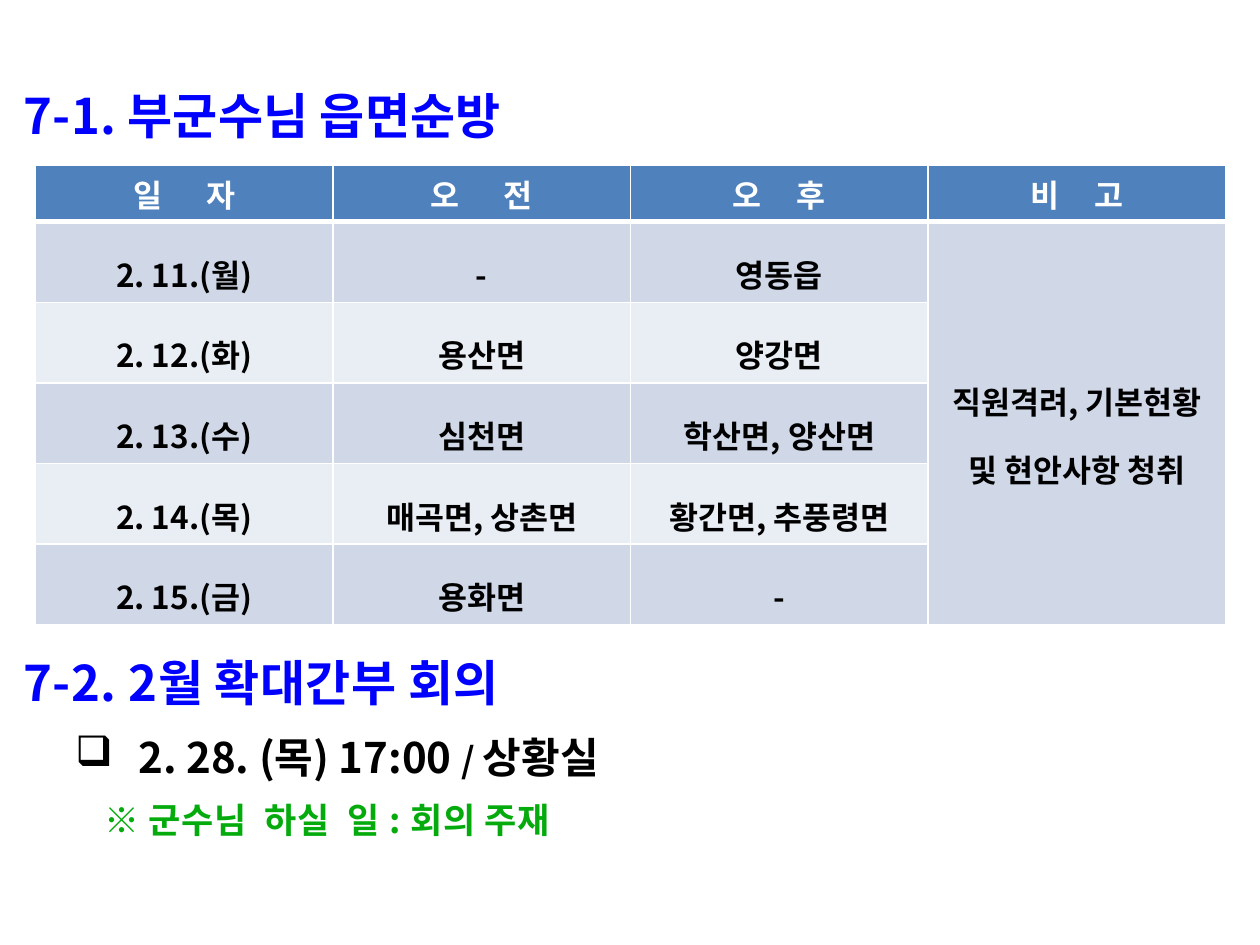
from pptx import Presentation
from pptx import util as u
from pptx.dml import color
from pptx.enum import text as t
from pptx.oxml import xmlchemy

FONT = "Noto Sans CJK KR"
BLUE, GREEN, BLACK, WHITE = "0000FF", "05AB0D", "000000", "FFFFFF"
HEAD, DARK, PALE = "4F81BD", "D0D8E8", "E9EDF4"
WIDE, HIGH = 10, 7.5
HEADS = [("일", "자", 10.5), ("오", "전", 10.5), ("오", "후", 8), ("비", "고", 8)]
DAYS = [
    ("2. 11.(월)", "-", "영동읍"),
    ("2. 12.(화)", "용산면", "양강면"),
    ("2. 13.(수)", "심천면", "학산면, 양산면"),
    ("2. 14.(목)", "매곡면, 상촌면", "황간면, 추풍령면"),
    ("2. 15.(금)", "용화면", "-"),
]
NOTE = "직원격려, 기본현황 및 현안사항 청취"


def rgb(code):
    return color.RGBColor.from_string(code)


def node(root, tag, **attrs):
    item = xmlchemy.OxmlElement(tag)
    for key, val in attrs.items():
        item.set(key, str(val))
    root.append(item)
    return item


def write(para, words, size=18, ink=BLACK, gap=0):
    run = para.add_run()
    run.text = words
    font = run.font
    font.size, font.bold, font.name = u.Pt(size), True, FONT
    font.color.rgb = rgb(ink)
    props = run._r.get_or_add_rPr()
    node(props, "a:ea", typeface=FONT)
    if gap:
        props.set("spc", str(round(gap * 100)))


def indent(para, left, first=0, mark=None):
    props = para._p.get_or_add_pPr()
    props.set("marL", str(u.Inches(left)))
    props.set("indent", str(u.Inches(first)))
    if mark:
        node(node(props, "a:buClr"), "a:srgbClr", val=BLACK)
        node(props, "a:buFont", typeface="Wingdings", charset=2)
        node(props, "a:buChar", char=mark)
    para.line_spacing = 1.4


def frame(slide, box):
    area = slide.shapes.add_textbox(*map(u.Inches, box)).text_frame
    area.word_wrap = True
    return area


def title(area, words, gap):
    para = area.paragraphs[0]
    indent(para, 0.09)
    write(para, words, size=28, ink=BLUE, gap=gap)


def border(cell, base):
    props = cell._tc.get_or_add_tcPr()
    for side in "LRTB":
        width = u.Pt(base if side == "B" else 1)
        line = node(props, "a:ln" + side, w=width)
        node(node(line, "a:solidFill"), "a:srgbClr", val=WHITE)


def paint(cell, fill, base=1):
    border(cell, base)
    cell.fill.solid()
    cell.fill.fore_color.rgb = rgb(fill)
    cell.vertical_anchor = t.MSO_ANCHOR.MIDDLE
    para = cell.text_frame.paragraphs[0]
    para.alignment = t.PP_ALIGN.CENTER
    return para


def visits(slide, box):
    rows, cols = len(DAYS) + 1, len(HEADS)
    grid = slide.shapes.add_table(rows, cols, *map(u.Inches, box)).table
    for col in grid.columns:
        col.width = u.Inches(box[2] / cols)
    for num, row in enumerate(grid.rows):
        row.height = u.Inches(0.64 if num else 0.45)
    for col, (first, last, gap) in enumerate(HEADS):
        para = paint(grid.cell(0, col), HEAD, base=3)
        write(para, first + " ", ink=WHITE, gap=gap)
        write(para, last, ink=WHITE)
    grid.cell(1, cols - 1).merge(grid.cell(rows - 1, cols - 1))
    for row, day in enumerate(DAYS, 1):
        fill = DARK if row % 2 else PALE
        for col, words in enumerate(day + (NOTE if row == 1 else "",)):
            para = paint(grid.cell(row, col), DARK if col == cols - 1 else fill)
            para.line_spacing = 1.5
            if words:
                write(para, words)


def meeting(slide, box):
    area = frame(slide, box)
    title(area, "7-2. 2월 확대간부 회의", gap=0.25)
    para = area.add_paragraph()
    indent(para, 1, -0.5, "q")
    for words, size in (("2. 28. (목) 17:00 ", 24), ("/ ", 20), ("상황실", 24)):
        write(para, words, size=size)
    para = area.add_paragraph()
    indent(para, 0.73)
    write(para, "※ 군수님  하실  일 : 회의 주재", size=20, ink=GREEN, gap=0.4)


def main():
    deck = Presentation()
    deck.slide_width, deck.slide_height = u.Inches(WIDE), u.Inches(HIGH)
    slide = deck.slides.add_slide(deck.slide_layouts[6])
    title(frame(slide, (0, 0.44, WIDE, HIGH * 0.11)), "7-1. 부군수님 읍면순방", gap=0.15)
    meeting(slide, (0, 4.94, WIDE, HIGH * 0.24))
    visits(slide, (0.28, 1.31, 9.45, 3.65))
    deck.save("out.pptx")


if __name__ == "__main__":
    main()
